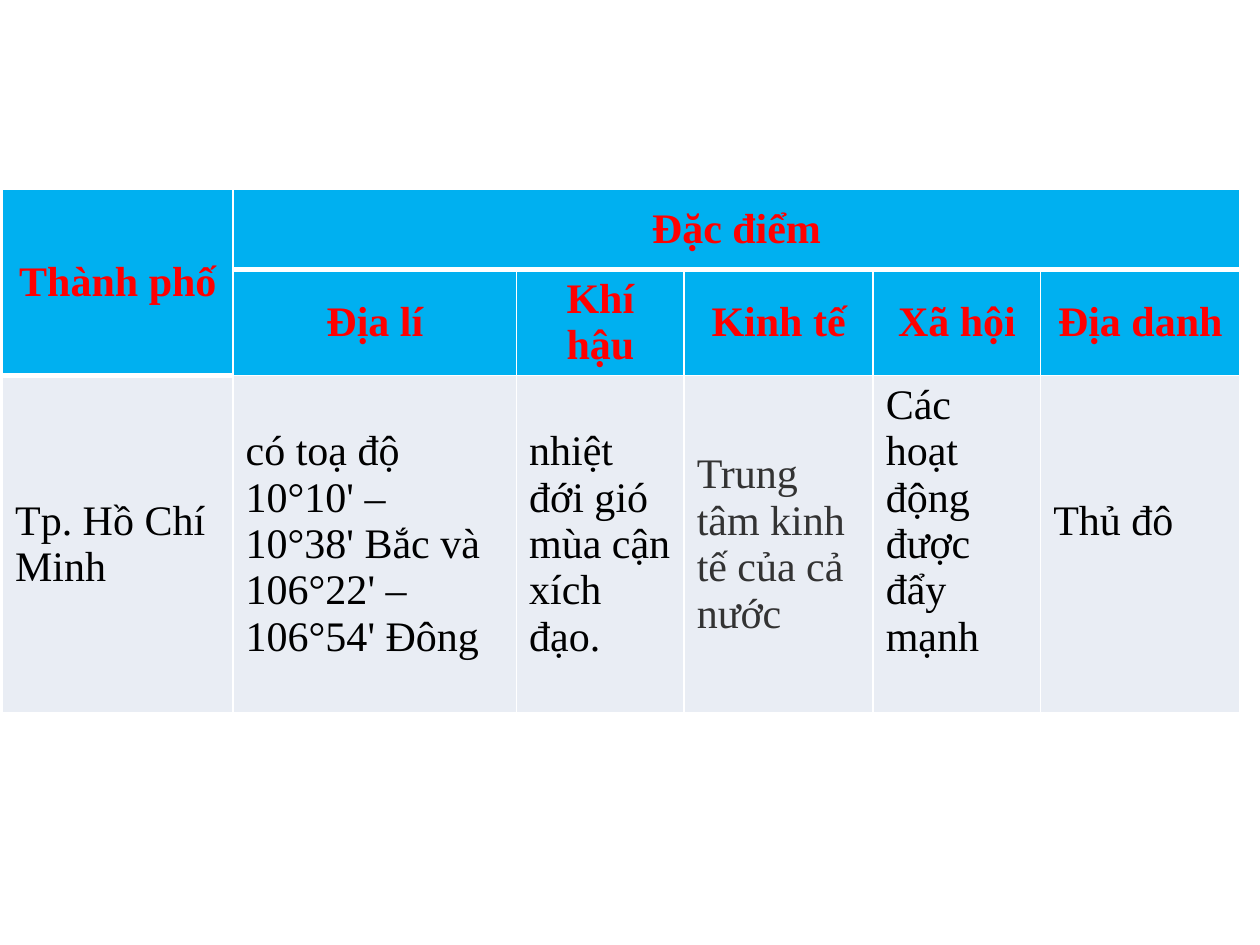
from lxml import etree
from pptx import Presentation
from pptx.dml.color import RGBColor
from pptx.enum import text
from pptx.oxml.ns import qn
from pptx.util import Inches, Pt

GROUP_HEADERS = ("Thành phố", "Đặc điểm")
FEATURES = ("Địa lí", "Khí hậu", "Kinh tế", "Xã hội", "Địa danh")
CITY = (
    "Tp. Hồ Chí Minh",
    "có toạ độ 10°10' – 10°38' Bắc và 106°22' – 106°54' Đông",
    "nhiệt đới gió mùa cận xích đạo.",
    "Trung tâm kinh tế của cả nước",
    "Các hoạt động được đẩy mạnh",
    "Thủ đô",
)
ECONOMY_COLUMN = 3
RAISED_COLUMNS = (4, 5)

COLUMN_WIDTHS = (1.83, 2.25, 1.33, 1.5, 1.33, 1.58)
ROW_HEIGHTS = (0.64, 0.84, 2.67)
TABLE_LEFT, TABLE_TOP = 0.02, 1.5
RAISED_MARGIN = 0.42

THEME = {
    "font": "Times New Roman",
    "size": 24,
    "header_fill": "00B0F0",
    "header_text": "FF0000",
    "body_fill": "E9EDF4",
    "body_text": "000000",
    "economy_text": "333333",
    "border": "FFFFFF",
}


def fill_cell(cell, content, header=False, color="body_text"):
    cell.fill.solid()
    fill = "header_fill" if header else "body_fill"
    cell.fill.fore_color.rgb = RGBColor.from_string(THEME[fill])
    cell.vertical_anchor = text.MSO_ANCHOR.MIDDLE
    paragraph = cell.text_frame.paragraphs[0]
    paragraph.alignment = text.PP_ALIGN.CENTER if header else text.PP_ALIGN.LEFT
    run = paragraph.add_run()
    run.text = content
    font = run.font
    font.name, font.size, font.bold = THEME["font"], Pt(THEME["size"]), header
    font.color.rgb = RGBColor.from_string(THEME["header_text" if header else color])


def add_borders(cell):
    """Thin white edges with a thick bottom edge, placed before the fill."""
    properties = cell._tc.get_or_add_tcPr()
    for index, (edge, points) in enumerate((("L", 1), ("R", 1), ("T", 1), ("B", 3))):
        line = etree.Element(qn(f"a:ln{edge}"), w=str(Pt(points)))
        solid = etree.SubElement(line, qn("a:solidFill"))
        etree.SubElement(solid, qn("a:srgbClr"), val=THEME["border"])
        properties.insert(index, line)


def build_table(slide):
    table = slide.shapes.add_table(
        len(ROW_HEIGHTS), len(COLUMN_WIDTHS), Inches(TABLE_LEFT), Inches(TABLE_TOP),
        Inches(sum(COLUMN_WIDTHS)), Inches(sum(ROW_HEIGHTS))).table
    for column, width in zip(table.columns, COLUMN_WIDTHS):
        column.width = Inches(width)
    for row, height in zip(table.rows, ROW_HEIGHTS):
        row.height = Inches(height)

    table.cell(0, 0).merge(table.cell(1, 0))
    table.cell(0, 1).merge(table.cell(0, len(FEATURES)))
    for column, title in enumerate(GROUP_HEADERS):
        cell = table.cell(0, column)
        fill_cell(cell, title, header=True)
        add_borders(cell)
    for column, title in enumerate(FEATURES, start=1):
        fill_cell(table.cell(1, column), title, header=True)
    for column, content in enumerate(CITY):
        cell = table.cell(2, column)
        color = "economy_text" if column == ECONOMY_COLUMN else "body_text"
        fill_cell(cell, content, color=color)
        if column in RAISED_COLUMNS:
            cell.margin_bottom = Inches(RAISED_MARGIN)


def main():
    presentation = Presentation()
    presentation.slide_width, presentation.slide_height = Inches(10), Inches(7.5)
    slide = presentation.slides.add_slide(presentation.slide_layouts[6])
    build_table(slide)
    presentation.save("out.pptx")


if __name__ == "__main__":
    main()
